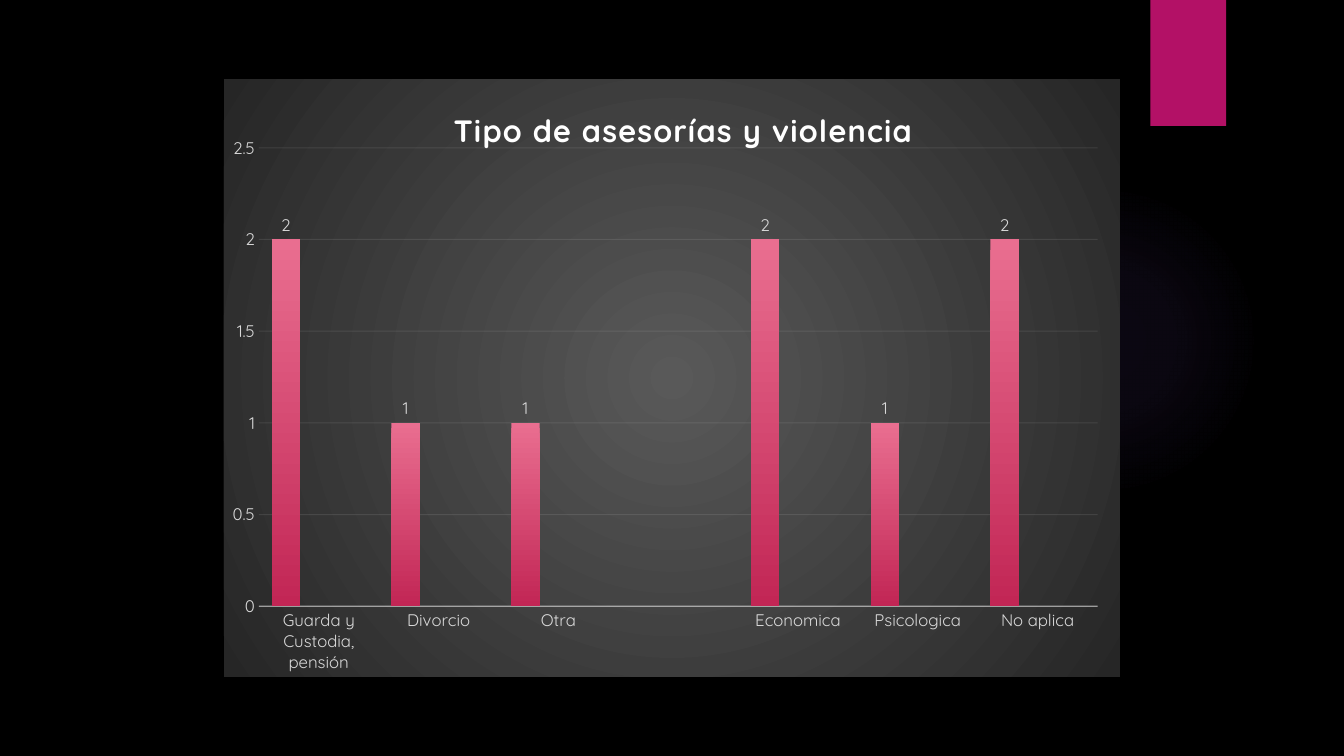
import dataclasses

import pptx
import pptx.chart.data
import pptx.dml.color
import pptx.enum.chart
import pptx.enum.shapes
import pptx.oxml
import pptx.oxml.ns
import pptx.util
from lxml import etree

Pt = pptx.util.Pt
qn = pptx.oxml.ns.qn
NS = pptx.oxml.ns.nsdecls("a", "c")


@dataclasses.dataclass(frozen=True)
class Theme:
    """Colours, font and type sizes of the slide."""
    back: str = "000000"
    accent: str = "B31166"
    glow: str = "9B6BF2"
    panel_in: str = "595959"
    panel_out: str = "262626"
    title: str = "FFFFFF"
    label: str = "D9D9D9"
    rule: str = "F2F2F2"
    bars: tuple = (("E96E90", "C22655"), ("EEAD6D", "C97721"), ("DD6AD9", "AE2EAA"))
    font: str = "Quicksand"
    title_size: int = 22
    label_size: int = 12


THEME = Theme()
CATEGORIES = ["Guarda y Custodia, pensión", "Divorcio", "Otra", "",
              "Economica", "Psicologica", "No aplica"]
VALUES = [2, 1, 1, None, 2, 1, 2]


def rgb(color):
    """Return a colour object for a hex string."""
    return pptx.dml.color.RGBColor.from_string(color)


def radial_fill(stops):
    """Return a circular gradient from (position, colour, alpha) stops in percent."""
    gs = "".join(f'<a:gs pos="{pos * 1000}"><a:srgbClr val="{color}">'
                 f'<a:alpha val="{alpha * 1000}"/></a:srgbClr></a:gs>'
                 for pos, color, alpha in stops)
    return pptx.oxml.parse_xml(
        f'<a:gradFill {NS} rotWithShape="1"><a:gsLst>{gs}</a:gsLst><a:path path="circle">'
        '<a:fillToRect l="50000" t="50000" r="50000" b="50000"/></a:path></a:gradFill>')


def manual_layout(x, y, w=None, h=None):
    """Return a chart layout placed by fractions of the chart area."""
    target = '<c:layoutTarget val="inner"/>' if w else ""
    size = f'<c:w val="{w}"/><c:h val="{h}"/>' if w else ""
    return pptx.oxml.parse_xml(
        f'<c:layout {NS}><c:manualLayout>{target}<c:xMode val="edge"/><c:yMode val="edge"/>'
        f'<c:x val="{x}"/><c:y val="{y}"/>{size}</c:manualLayout></c:layout>')


def style_font(font, color, size, bold=False):
    """Set the typeface, colour, size and weight of a font."""
    font.name, font.size, font.bold = THEME.font, Pt(size), bold
    font.color.rgb = rgb(color)


def style_line(line, width, alpha):
    """Set a translucent rule."""
    line.width = Pt(width)
    line.color.rgb = rgb(THEME.rule)
    clr = line.fill._xPr.find(".//" + qn("a:srgbClr"))
    etree.SubElement(clr, qn("a:alpha"), val=str(alpha * 1000))


def add_glow(slide, left, top, width, height):
    """Add the faint round glow."""
    sp = slide.shapes.add_shape(pptx.enum.shapes.MSO_SHAPE.OVAL, left, top, width, height)
    sp.shadow.inherit = False
    sp.line.fill.background()
    stops = [(0, THEME.glow, 7), (36, THEME.glow, 6), (69, THEME.glow, 0)]
    sp._element.spPr.find(qn("a:prstGeom")).addnext(radial_fill(stops))


def add_tab(slide, left, top, width, height):
    """Add the coloured tab with its soft shadow."""
    sp = slide.shapes.add_shape(pptx.enum.shapes.MSO_SHAPE.RECTANGLE, left, top, width, height)
    sp.shadow.inherit = False
    sp.fill.solid()
    sp.fill.fore_color.rgb = rgb(THEME.accent)
    sp.line.fill.background()
    sp._element.spPr.find(qn("a:effectLst")).append(pptx.oxml.parse_xml(
        f'<a:outerShdw {NS} blurRad="{Pt(3)}" dist="{Pt(2)}" dir="5400000" rotWithShape="0">'
        '<a:srgbClr val="000000"><a:alpha val="45000"/></a:srgbClr></a:outerShdw>'))


def style_title(chart):
    """Write and place the chart title."""
    chart.has_title = True
    title = chart.chart_title
    p = title.text_frame.paragraphs[0]
    r = p.add_run()
    r.text = "Tipo de asesorías y violencia"
    style_font(r.font, THEME.title, THEME.title_size, bold=True)
    r.font._element.set("spc", "100")
    title.include_in_layout = False
    for old in title._element.findall(qn("c:layout")):
        title._element.remove(old)
    title._element.find(qn("c:tx")).addnext(manual_layout(0.25, 0.04))


def style_axes(chart):
    """Format both axes and the gridlines."""
    none = pptx.enum.chart.XL_TICK_MARK.NONE
    for axis in (chart.category_axis, chart.value_axis):
        axis.major_tick_mark = axis.minor_tick_mark = none
        style_font(axis.tick_labels.font, THEME.label, THEME.label_size)
    style_line(chart.category_axis.format.line, 1, 54)
    value = chart.value_axis
    value.minimum_scale, value.maximum_scale, value.major_unit = 0, 2.5, 0.5
    value.format.line.fill.background()
    value.has_major_gridlines = True
    style_line(value.major_gridlines.format.line, 0.75, 10)


def style_series(plot):
    """Give each series its gradient and value labels."""
    plot.gap_width, plot.overlap, plot.vary_by_categories = 90, -16, False
    for ser, colors in zip(plot.series, THEME.bars):
        fill = ser.format.fill
        fill.gradient()
        fill.gradient_angle = 270
        for stop, color, pos in zip(fill.gradient_stops, colors, (0, 1)):
            stop.color.rgb, stop.position = rgb(color), pos
        ser.invert_if_negative = False
        labels = ser.data_labels
        labels.show_value = True
        labels.position = pptx.enum.chart.XL_LABEL_POSITION.OUTSIDE_END
        style_font(labels.font, THEME.label, THEME.label_size)


def add_column_chart(slide, left, top, width, height):
    """Add the column chart on its shaded panel."""
    data = pptx.chart.data.CategoryChartData()
    data.categories = CATEGORIES
    empty = [None] * len(CATEGORIES)
    for number, values in enumerate((VALUES, empty, empty), 1):
        data.add_series(f"Series {number}", values)
    kind = pptx.enum.chart.XL_CHART_TYPE.COLUMN_CLUSTERED
    chart = slide.shapes.add_chart(kind, left, top, width, height, data).chart
    chart.has_legend = False
    style_font(chart.font, THEME.title, 10)
    style_title(chart)
    style_axes(chart)
    style_series(chart.plots[0])
    root = chart._chartSpace.find(qn("c:chart"))
    area = root.find(qn("c:plotArea"))
    for old in area.findall(qn("c:layout")):
        area.remove(old)
    area.insert(0, manual_layout(0.039, 0.115, 0.936, 0.767))
    panel = pptx.oxml.parse_xml(f"<c:spPr {NS}><a:ln><a:noFill/></a:ln></c:spPr>")
    panel.insert(0, radial_fill([(0, THEME.panel_in, 100), (100, THEME.panel_out, 100)]))
    root.addnext(panel)


def main():
    """Build and save the slide."""
    prs = pptx.Presentation()
    prs.slide_width, prs.slide_height = Pt(960), Pt(540)
    slide = prs.slides.add_slide(prs.slide_layouts[6])
    slide.background.fill.solid()
    slide.background.fill.fore_color.rgb = rgb(THEME.back)
    add_glow(slide, Pt(677.5), Pt(131.8), Pt(221.8), Pt(221.8))
    add_tab(slide, Pt(821.8), Pt(0), Pt(54), Pt(90))
    add_column_chart(slide, Pt(160), Pt(56.5), Pt(640), Pt(427))
    prs.save("out.pptx")


if __name__ == "__main__":
    main()
